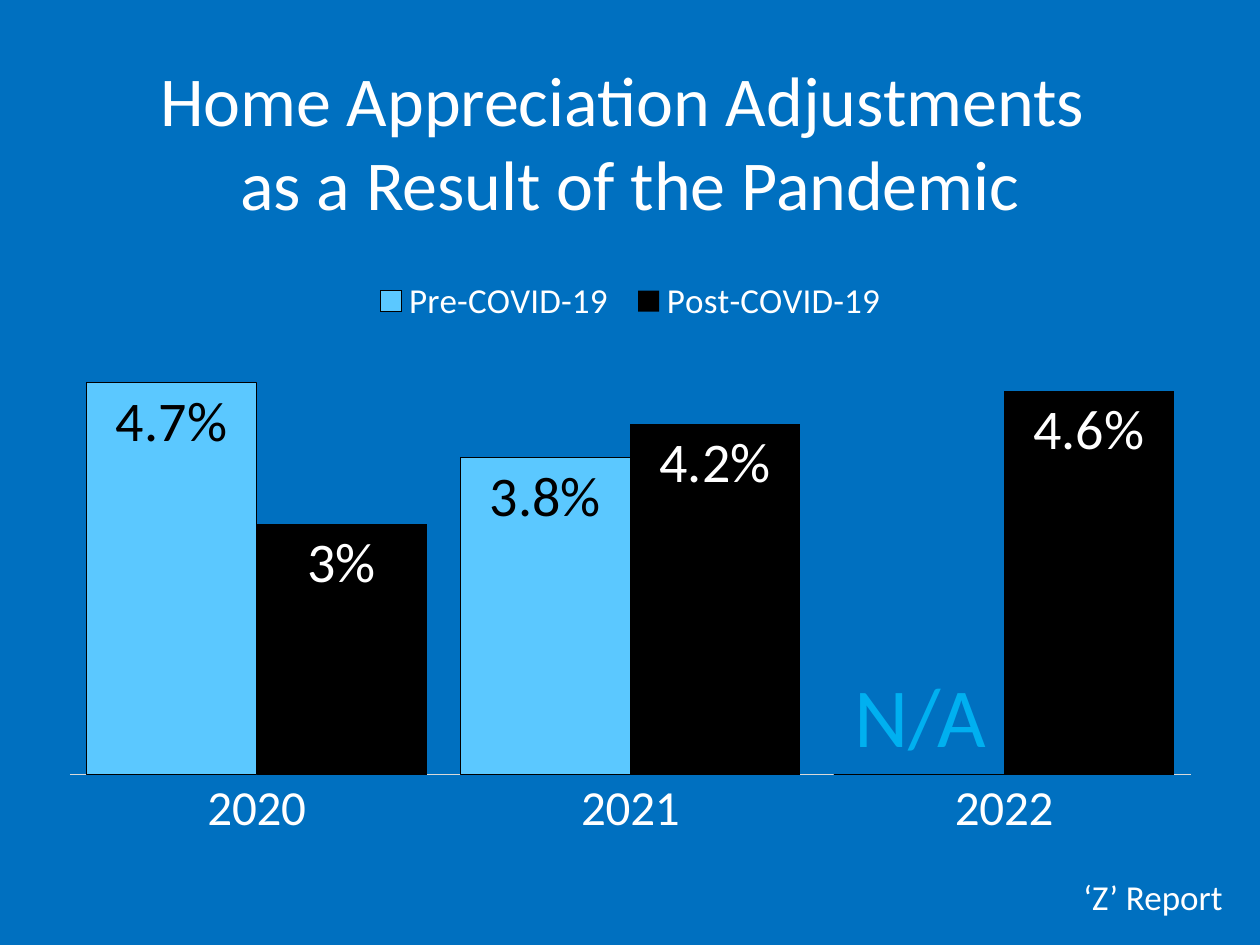
from lxml import etree
from pptx import Presentation
from pptx.chart.data import CategoryChartData
from pptx.dml.color import RGBColor
from pptx.enum.chart import XL_CHART_TYPE as ChartType, XL_LABEL_POSITION as LabelPos
from pptx.enum.chart import XL_LEGEND_POSITION as LegendPos, XL_TICK_MARK as TickMark
from pptx.enum.shapes import MSO_SHAPE as Shape
from pptx.enum.text import MSO_ANCHOR as Anchor, MSO_AUTO_SIZE as AutoSize, PP_ALIGN as Align
from pptx.oxml.ns import qn
from pptx.util import Pt

WHITE, BLACK, BLUE = "FFFFFF", "000000", "0070C0"
YEARS = ["2020", "2021", "2022"]
# name, values, bar colour, label colour
SERIES = [
    ("Pre-COVID-19", (0.047, 0.038, 0), "5BC8FF", BLACK),
    ("Post-COVID-19", (0.03, 0.042, 0.046), BLACK, WHITE),
]


def colour(hex_value):
    return RGBColor.from_string(hex_value)


def apply(target, values):
    for name, value in values.items():
        setattr(target, name, value)


def style_font(font, size, hex_value):
    apply(font, {"name": "Calibri", "size": Pt(size), "bold": False})
    font.color.rgb = colour(hex_value)


def place(item, box):
    apply(item, dict(zip(("left", "top", "width", "height"), map(Pt, box))))


def write(frame, lines, size, hex_value, align=Align.LEFT):
    for index, line in enumerate(lines):
        para = frame.paragraphs[0] if index == 0 else frame.add_paragraph()
        para.alignment = align
        span = para.add_run()
        span.text = line
        style_font(span.font, size, hex_value)


def add_backdrop(page, box):
    panel = page.shapes.add_shape(Shape.RECTANGLE, *map(Pt, box))
    panel.shadow.inherit = False
    panel.fill.solid()
    panel.fill.fore_color.rgb = colour(BLUE)
    panel.line.fill.background()


def add_title(page, box):
    title = page.shapes.title
    place(title, box)
    apply(title.text_frame, {"word_wrap": True, "vertical_anchor": Anchor.TOP,
                             "auto_size": AutoSize.SHAPE_TO_FIT_TEXT})
    write(title.text_frame, ["Home Appreciation Adjustments ", "as a Result of the Pandemic"],
          40, WHITE, Align.CENTER)
    # Bring the title in front of the backdrop
    title.element.getparent().append(title.element)


def add_note(page, box, text, size, hex_value):
    note = page.shapes.add_textbox(*map(Pt, box))
    apply(note.text_frame, {"word_wrap": False, "auto_size": AutoSize.SHAPE_TO_FIT_TEXT})
    write(note.text_frame, [text], size, hex_value)


def set_layout(parent, position, fractions, inner=False):
    """Give a chart part a manual layout in fractions of the chart."""
    for old in parent.findall(qn("c:layout")):
        parent.remove(old)
    layout = etree.Element(qn("c:layout"))
    manual = etree.SubElement(layout, qn("c:manualLayout"))
    settings = [("layoutTarget", "inner")] if inner else []
    settings += [("xMode", "edge"), ("yMode", "edge"), *zip("xywh", fractions)]
    for tag, value in settings:
        etree.SubElement(manual, qn(f"c:{tag}")).set("val", str(value))
    parent.insert(position, layout)


def add_growth_chart(page, box):
    data = CategoryChartData(number_format="0.0%")
    data.categories = YEARS
    for name, values, *_ in SERIES:
        data.add_series(name, values)
    chart = page.shapes.add_chart(ChartType.COLUMN_CLUSTERED, *map(Pt, box), data).chart
    chart.has_title = False
    style_font(chart.font, 10, BLACK)

    # Axes
    values_axis = chart.value_axis
    apply(values_axis, {"visible": False, "has_major_gridlines": False,
                        "minimum_scale": 0, "maximum_scale": 0.06})
    years_axis = chart.category_axis
    apply(years_axis, {"major_tick_mark": TickMark.NONE, "minor_tick_mark": TickMark.NONE})
    style_font(years_axis.tick_labels.font, 28, WHITE)
    years_axis.format.line.color.rgb = colour("D9D9D9")
    years_axis.format.line.width = Pt(0.75)

    # Legend
    chart.has_legend = True
    apply(chart.legend, {"position": LegendPos.TOP, "include_in_layout": False})
    style_font(chart.legend.font, 20, WHITE)
    set_layout(chart.element.find(".//" + qn("c:legend")), 1, (0.27, 0.12, 0.46, 0.08))
    set_layout(chart.element.find(".//" + qn("c:plotArea")), 0, (0.02, 0.12, 0.96, 0.74), True)

    # Bars and their labels; the format leaves a zero unlabelled
    plot = chart.plots[0]
    apply(plot, {"gap_width": 20, "overlap": 0, "vary_by_categories": False})
    for bars, (_, _, fill, text_colour) in zip(plot.series, SERIES):
        bars.format.fill.solid()
        bars.format.fill.fore_color.rgb = colour(fill)
        labels = bars.data_labels
        apply(labels, {"show_value": True, "position": LabelPos.INSIDE_END,
                       "number_format": "0.0%;;", "number_format_is_linked": False})
        style_font(labels.font, 32, text_colour)
    pre, post = plot.series
    pre.format.line.color.rgb = colour(BLACK)
    pre.format.line.width = Pt(0.75)
    rounded = post.points[0].data_label
    write(rounded.text_frame, ["3%"], 32, WHITE, Align.CENTER)
    rounded.position = LabelPos.INSIDE_END


def main():
    deck = Presentation()
    apply(deck, {"slide_width": Pt(720), "slide_height": Pt(540)})
    page = deck.slides.add_slide(deck.slide_layouts[5])
    add_backdrop(page, (0, 0, 720, 540))
    add_growth_chart(page, (26.6, 110.2, 667.4, 386.6))
    add_note(page, (481, 375.8, 90.7, 65.5), "N/A", 48, "00B0F0")
    add_title(page, (0, 28.8, 720, 104.4))
    add_note(page, (612, 496.8, 95, 31.7), "‘Z’ Report", 20, WHITE)
    deck.save("out.pptx")


if __name__ == "__main__":
    main()
